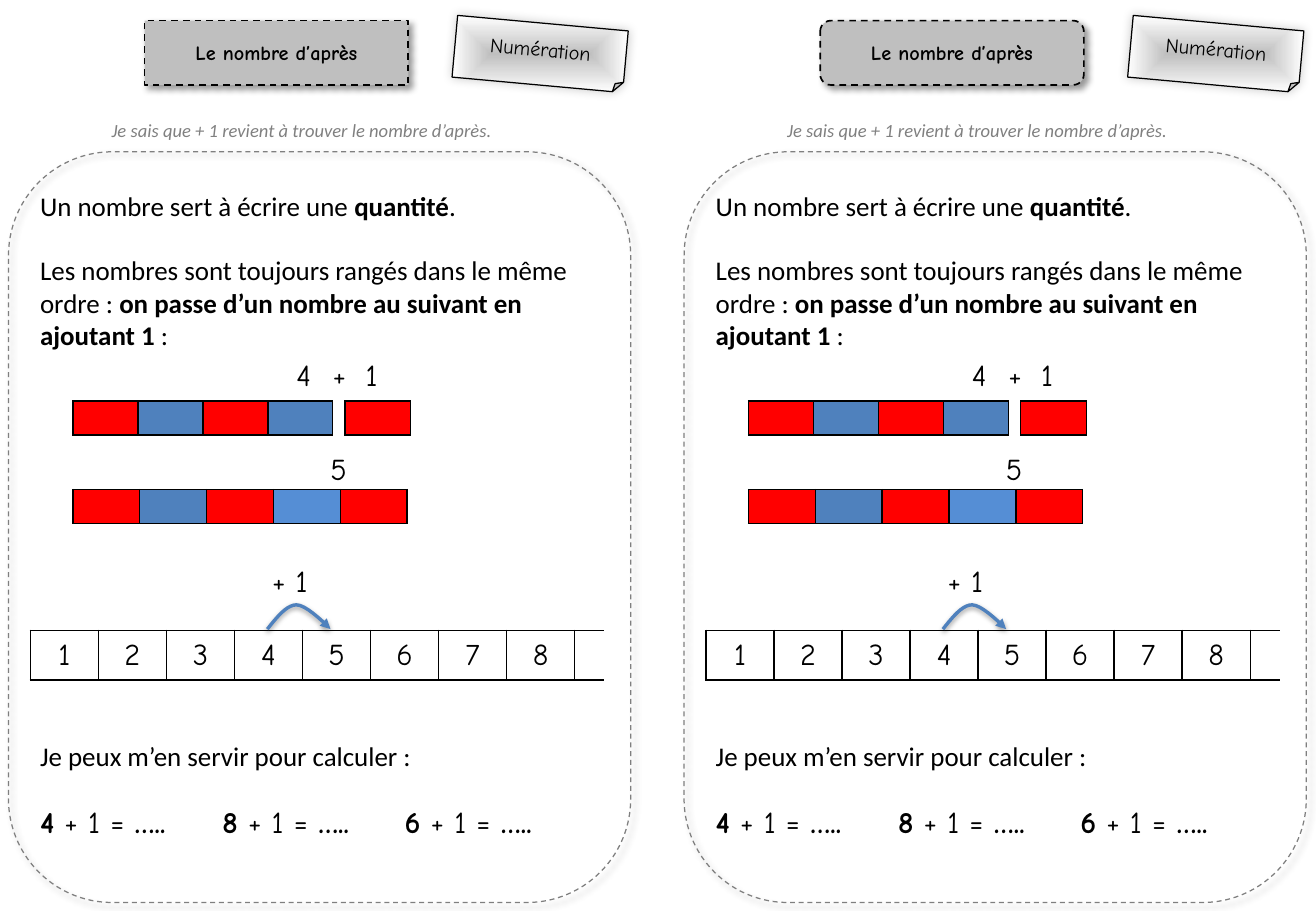
from pptx import Presentation
from pptx.dml.color import RGBColor
from pptx.enum.dml import MSO_LINE
from pptx.enum.shapes import MSO_SHAPE as Preset
from pptx.enum.text import MSO_ANCHOR as Anchor, MSO_AUTO_SIZE as AutoSize, PP_ALIGN as Align
from pptx.oxml import parse_xml
from pptx.oxml.ns import nsdecls, qn
from pptx.util import Inches, Pt
from lxml.etree import SubElement

# Content
TITLE = "Le nombre d’après"
TOPIC = "Numération"
GOAL = "Je sais que + 1 revient à trouver le nombre d’après."
# Each paragraph: space before (pt), font, tab stops, (text, bold) runs
LESSON = [
    (0, "text", [], [("Un nombre sert à écrire une ", False), ("quantité", True), (".", False)]),
    (19, "text", [], [("Les nombres sont toujours rangés dans le même ordre : ", False),
                      ("on passe d’un nombre au suivant en ajoutant 1", True), (" :", False)]),
    (230, "text", [], [("Je peux m’en servir pour calculer :", False)]),
    (19, "number", [1.67, 3.42], [("4", True), (" + 1 = ", False), ("…..\t8", True),
                                  (" + 1 = ", False), ("…..\t6", True),
                                  (" + 1 = ", False), ("…..", True)]),
]
# Bars of cubes: left, top, cube width, colours
BARS = [
    (0.6, 3.3, 0.535, ["red", "blue", "red", "blue"]),
    (2.84, 3.3, 0.54, ["red"]),
    (0.6, 4.03, 0.55, ["red", "blue", "red", "light blue", "red"]),
]
# Labels: text, left, top, width, tab stops
LABELS = [("4\t+\t1", 2.34, 2.88, 0.9, [0.3, 0.57]),
          ("5", 2.62, 3.66, 0.34, []),
          ("+ 1", 2.14, 4.58, 0.55, [])]
NUMBER_LINE = ["1", "2", "3", "4", "5", "6", "7", "8", ""]
# Jump from 4 to 5: two Bézier curves
JUMP = [[(2.2, 5.18), (2.28, 5.08), (2.36, 4.98), (2.44, 4.98)],
        [(2.44, 4.98), (2.53, 4.98), (2.72, 5.18), (2.72, 5.18)]]

CARD_LEFTS = [0, 5.56]
COLORS = {"black": "000000", "grey": "7F7F7F", "goal": "808080", "silver": "BFBFBF",
          "white": "FFFFFF", "red": "FF0000", "blue": "4F81BD", "light blue": "558ED5"}
FONTS = {
    "title": {"name": "Comic Neue", "size": Pt(12), "bold": True},
    "topic": {"name": "Comic Neue", "size": Pt(12), "bold": False},
    "goal": {"name": "Calibri", "size": Pt(11), "italic": True},
    "text": {"name": "Calibri", "size": Pt(16)},
    "number": {"name": "Comic Neue", "size": Pt(18)},
}
# Shadows: opacity %, blur pt, distance pt, direction
SOFT, GLOW, UNDER = (40, 4, 3, 45), (20, 6, 0, 315), (38, 3.1, 1.6, 90)


def rgb(name):
    return RGBColor.from_string(COLORS[name])


def box(left, top, width, height):
    return [Inches(v) for v in (left, top, width, height)]


def add_run(paragraph, text, font, color="black", **extra):
    run = paragraph.add_run()
    run.text = text
    for key, value in {**FONTS[font], **extra}.items():
        setattr(run.font, key, value)
    run.font.color.rgb = rgb(color)


def set_tabs(paragraph, stops):
    if stops:
        tabs = SubElement(paragraph._p.get_or_add_pPr(), qn("a:tabLst"))
        for stop in stops:
            SubElement(tabs, qn("a:tab"), pos=str(Inches(stop)), algn="l")


def set_outline(shape, color, width, shadow, dash=None):
    shape.line.color.rgb = rgb(color)
    shape.line.width = Pt(width)
    if dash:
        shape.line.dash_style = dash
    shape.shadow.inherit = False
    opacity, blur, distance, angle = shadow
    outer = SubElement(shape._element.spPr.find(qn("a:effectLst")), qn("a:outerShdw"),
                       blurRad=str(Pt(blur)), dist=str(Pt(distance)),
                       dir=str(angle * 60000), algn="ctr", rotWithShape="0")
    tint = SubElement(outer, qn("a:srgbClr"), val=COLORS["black"])
    SubElement(tint, qn("a:alpha"), val=str(opacity * 1000))


def center_text(shape, text, font):
    frame = shape.text_frame
    frame.auto_size, frame.vertical_anchor = AutoSize.NONE, Anchor.MIDDLE
    frame.paragraphs[0].alignment = Align.CENTER
    add_run(frame.paragraphs[0], text, font)


def add_text(shapes, text, place, font, color="black", tabs=()):
    frame = shapes.add_textbox(*box(*place)).text_frame
    frame.word_wrap = False
    set_tabs(frame.paragraphs[0], tabs)
    add_run(frame.paragraphs[0], text, font, color)


def add_strip(shapes, left, top, height, widths):
    table = shapes.add_table(1, len(widths), *box(left, top, sum(widths), height)).table
    table.first_row = table.horz_banding = False
    for column, width in zip(table.columns, widths):
        column.width = Inches(width)
    return list(table.rows[0].cells)


def set_borders(cell, sides):
    properties = cell._tc.get_or_add_tcPr()
    for position, side in enumerate(sides):
        properties.insert(position, parse_xml(
            f'<a:ln{side} {nsdecls("a")} w="12700"><a:solidFill>'
            f'<a:srgbClr val="{COLORS["black"]}"/></a:solidFill></a:ln{side}>'))


def fill_lesson(body, left):
    body.left, body.top, body.width, body.height = box(left + 0.23, 1.51, 4.82, 5.76)
    frame = body.text_frame
    frame.auto_size, frame.vertical_anchor = AutoSize.NONE, Anchor.TOP
    for index, (space, font, tabs, runs) in enumerate(LESSON):
        paragraph = frame.add_paragraph() if index else frame.paragraphs[0]
        paragraph.space_before = Pt(space)
        properties = paragraph._p.get_or_add_pPr()
        properties.set("marL", "0")
        properties.set("indent", "0")
        SubElement(properties, qn("a:buNone"))
        set_tabs(paragraph, tabs)
        for text, bold in runs:
            add_run(paragraph, text, font, bold=bold)


def curve_points(left, steps=10):
    for p0, p1, p2, p3 in JUMP:
        for t in (step / steps for step in range(1, steps + 1)):
            x, y = (a * (1 - t) ** 3 + 3 * b * t * (1 - t) ** 2 + 3 * c * t ** 2 * (1 - t) + d * t ** 3
                    for a, b, c, d in zip(p0, p1, p2, p3))
            yield Inches(left + x), Inches(y)


def build_card(shapes, title, body, left):
    # Heading, topic note and frame
    title.left, title.top, title.width, title.height = box(left + 1.19, 0.17, 2.17, 0.53)
    title.fill.solid()
    title.fill.fore_color.rgb = rgb("silver")
    set_outline(title, "black", 1, SOFT, MSO_LINE.DASH)
    center_text(title, TITLE, "title")

    topic = shapes.add_shape(Preset.FOLDED_CORNER, *box(left + 3.74, 0.19, 1.41, 0.51))
    topic.rotation = 5.2
    stops = "".join(f'<a:gs pos="{pos}"><a:srgbClr val="{COLORS[name]}"/></a:gs>'
                    for pos, name in ((0, "silver"), (100000, "white")))
    topic._element.spPr.insert(2, parse_xml(
        f'<a:gradFill {nsdecls("a")} rotWithShape="1"><a:gsLst>{stops}</a:gsLst><a:path path="shape">'
        '<a:fillToRect l="50000" t="50000" r="50000" b="50000"/></a:path></a:gradFill>'))
    set_outline(topic, "black", 0.75, GLOW)
    center_text(topic, TOPIC, "topic")

    border = shapes.add_shape(Preset.ROUNDED_RECTANGLE, *box(left + 0.07, 1.25, 5.12, 6.18))
    border.fill.background()
    set_outline(border, "grey", 0.75, SOFT, MSO_LINE.DASH)

    # Goal and lesson
    add_text(shapes, GOAL, (left + 0.82, 0.93, 3.46, 0.29), "goal", "goal")
    fill_lesson(body, left)

    # Cube bars and labels
    for bar_left, top, width, cubes in BARS:
        for cell, color in zip(add_strip(shapes, left + bar_left, top, 0.28, [width] * len(cubes)), cubes):
            cell.margin_top = cell.margin_bottom = 0
            cell.fill.solid()
            cell.fill.fore_color.rgb = rgb(color)
            set_borders(cell, "LRTB")
            SubElement(cell.text_frame.paragraphs[0]._p, qn("a:endParaRPr"), sz="800")
    for text, label_left, top, width, tabs in LABELS:
        add_text(shapes, text, (left + label_left, top, width, 0.4), "number", tabs=tabs)

    # Number line, open on the right, and the jump
    widths = [0.56 if number else 0.25 for number in NUMBER_LINE]
    for cell, number in zip(add_strip(shapes, left + 0.25, 5.19, 0.41, widths), NUMBER_LINE):
        cell.fill.background()
        set_borders(cell, "LRTB" if number else "LTB")
        cell.vertical_anchor = Anchor.MIDDLE
        if number:
            cell.text_frame.paragraphs[0].alignment = Align.CENTER
            add_run(cell.text_frame.paragraphs[0], number, "number")
    start_x, start_y = JUMP[0][0]
    builder = shapes.build_freeform(Inches(left + start_x), Inches(start_y))
    builder.add_line_segments(list(curve_points(left)), close=False)
    jump = builder.convert_to_shape()
    jump.fill.background()
    set_outline(jump, "blue", 2, UNDER)
    SubElement(jump.line._get_or_add_ln(), qn("a:tailEnd"), type="triangle")


def main():
    deck = Presentation()
    deck.slide_width, deck.slide_height = Inches(10.83), Inches(7.5)
    slide = deck.slides.add_slide(deck.slide_layouts[3])
    shapes = slide.shapes
    first_title, *bodies = list(slide.placeholders)
    first_title.left, first_title.top, first_title.width, first_title.height = box(1.19, 0.17, 2.17, 0.53)
    first_title._element.spPr.insert(1, parse_xml(
        f'<a:prstGeom {nsdecls("a")} prst="roundRect"><a:avLst/></a:prstGeom>'))
    second_title = shapes.add_shape(Preset.ROUNDED_RECTANGLE, *box(6.75, 0.17, 2.17, 0.53))
    for title, body, left in zip([first_title, second_title], bodies, CARD_LEFTS):
        build_card(shapes, title, body, left)
    deck.save("out.pptx")


if __name__ == "__main__":
    main()
